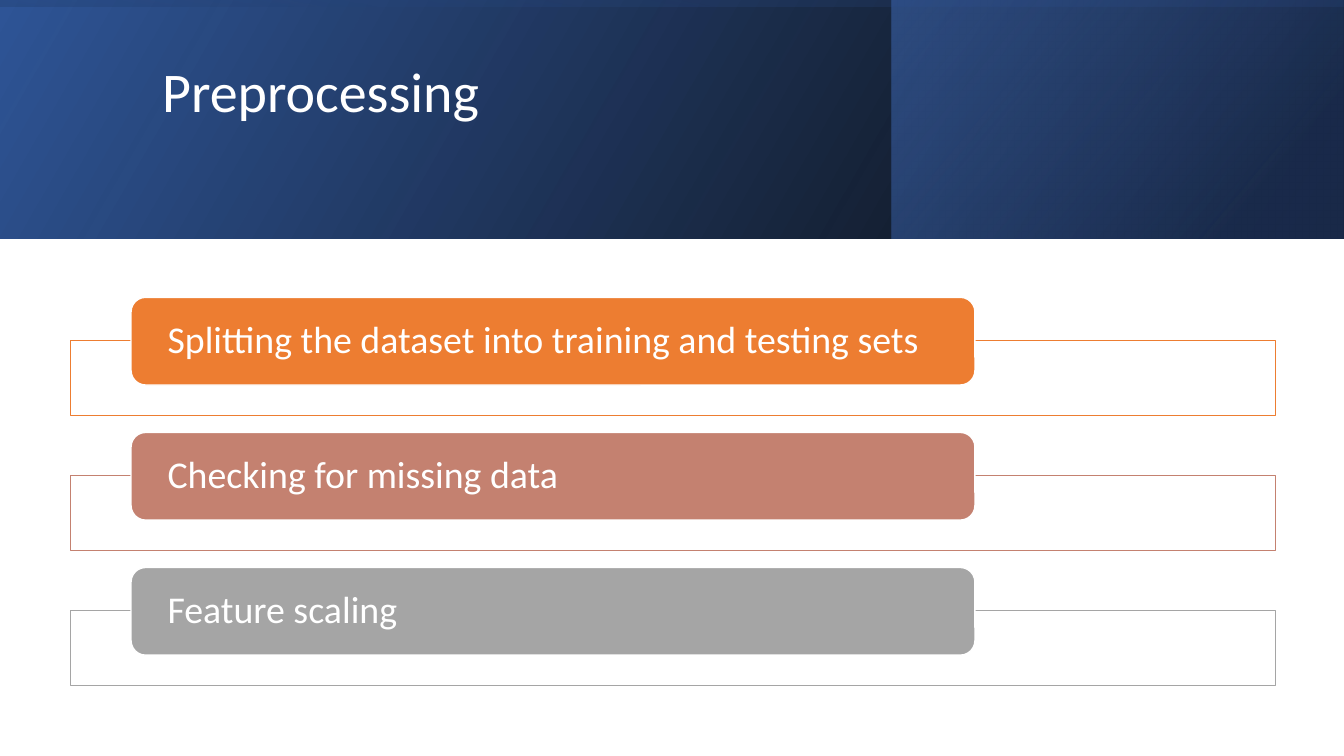
from dataclasses import dataclass

from lxml import etree
from pptx import Presentation
from pptx import util as u
from pptx.dml.color import RGBColor
from pptx.enum import shapes, text
from pptx.oxml.ns import qn


@dataclass(frozen=True)
class Theme:
    font: str = "Calibri"
    white: str = "FFFFFF"
    black: str = "000000"
    blue: str = "2F5597"
    navy: str = "203864"
    sky: str = "4472C4"
    orange: str = "ED7D31"
    rose: str = "C48170"
    gray: str = "A5A5A5"
    title_size: float = 40
    step_size: float = 27
    line_width: float = 1


@dataclass(frozen=True)
class Box:
    left: float
    top: float
    width: float
    height: float

    def lengths(self) -> list:
        return [u.Inches(v) for v in (self.left, self.top, self.width, self.height)]


@dataclass(frozen=True)
class Stop:
    position: float
    color: str
    alpha: float = 100


@dataclass(frozen=True)
class Band:
    box: Box
    stops: tuple[Stop, Stop]
    angle: float
    rotation: float = 0


@dataclass(frozen=True)
class Step:
    label: str
    color: str


THEME = Theme()
SLIDE_W, SLIDE_H = 13.33, 7.5
BANNER_H = 2.37
STEP_TOP, STEP_PITCH = 2.95, 1.34
FRAME_DROP = 0.43

BANDS = (
    Band(Box(0, 0, SLIDE_W, BANNER_H),
         (Stop(0, THEME.black, 96), Stop(100, THEME.blue)), 30),
    Band(Box(8.84, 0, 4.48, BANNER_H),
         (Stop(19, THEME.navy, 68), Stop(100, THEME.sky, 48)), 40),
    Band(Box((SLIDE_W - BANNER_H) / 2, (BANNER_H - SLIDE_W) / 2, BANNER_H, SLIDE_W),
         (Stop(23, THEME.blue, 16), Stop(99, THEME.black, 45)), 10, 270),
)
STEPS = (
    Step("Splitting the dataset into training and testing sets", THEME.orange),
    Step("Checking for missing data", THEME.rose),
    Step("Feature scaling", THEME.gray),
)


def set_alpha(parent, percent: float) -> None:
    if percent < 100:
        color = next(parent.iter(qn("a:srgbClr")))
        etree.SubElement(color, qn("a:alpha")).set("val", str(round(percent * 1000)))


def add_box(slide, kind, box: Box):
    sp = slide.shapes.add_shape(kind, *box.lengths())
    sp.shadow.inherit = False
    return sp


def add_band(slide, band: Band) -> None:
    sp = add_box(slide, shapes.MSO_SHAPE.RECTANGLE, band.box)
    sp.rotation = band.rotation
    sp._element.spPr.find(qn("a:xfrm")).set("flipH", "1")
    sp.line.fill.background()
    sp.fill.gradient()
    sp.fill.gradient_angle = band.angle
    for gs, stop in zip(sp.fill.gradient_stops, band.stops):
        gs.position = stop.position / 100
        gs.color.rgb = RGBColor.from_string(stop.color)
    elements = sp._element.spPr.iter(qn("a:gs"))
    for element, stop in zip(elements, band.stops):
        set_alpha(element, stop.alpha)


def add_solid(slide, kind, box: Box, fill: str, line: str, alpha: float = 100):
    sp = add_box(slide, kind, box)
    sp.fill.solid()
    sp.fill.fore_color.rgb = RGBColor.from_string(fill)
    set_alpha(sp._element.spPr, alpha)
    sp.line.color.rgb = RGBColor.from_string(line)
    sp.line.width = u.Pt(THEME.line_width)
    return sp


def write(sp, content: str, *, size: float, side: float = 0.1,
          top: float = 0.0, bottom: float = 0.0) -> None:
    tf = sp.text_frame
    tf.word_wrap = True
    tf.vertical_anchor = text.MSO_ANCHOR.MIDDLE
    tf.margin_left = tf.margin_right = u.Inches(side)
    tf.margin_top, tf.margin_bottom = u.Inches(top), u.Inches(bottom)
    p = tf.paragraphs[0]
    p.alignment = text.PP_ALIGN.LEFT
    p.line_spacing = 0.9
    r = p.add_run()
    r.text = content
    r.font.name = THEME.font
    r.font.size = u.Pt(size)
    r.font.color.rgb = RGBColor.from_string(THEME.white)


def add_step(slide, step: Step, top: float) -> None:
    frame = Box(0.7, top + FRAME_DROP, 11.95, 0.74)
    add_solid(slide, shapes.MSO_SHAPE.RECTANGLE, frame, THEME.white, step.color, 90)
    label = Box(1.3, top, 8.37, 0.87)
    sp = add_solid(slide, shapes.MSO_SHAPE.ROUNDED_RECTANGLE, label,
                   step.color, THEME.white)
    write(sp, step.label, size=THEME.step_size, side=0.32)


def main() -> None:
    prs = Presentation()
    prs.slide_width, prs.slide_height = u.Inches(SLIDE_W), u.Inches(SLIDE_H)
    slide = prs.slides.add_slide(prs.slide_layouts[6])
    for band in BANDS:
        add_band(slide, band)
    title = slide.shapes.add_textbox(*Box(1.51, 0.38, 10.63, 1.72).lengths())
    write(title, "Preprocessing", size=THEME.title_size, top=0.05, bottom=0.66)
    for i, step in enumerate(STEPS):
        add_step(slide, step, STEP_TOP + i * STEP_PITCH)
    prs.save("out.pptx")


if __name__ == "__main__":
    main()
